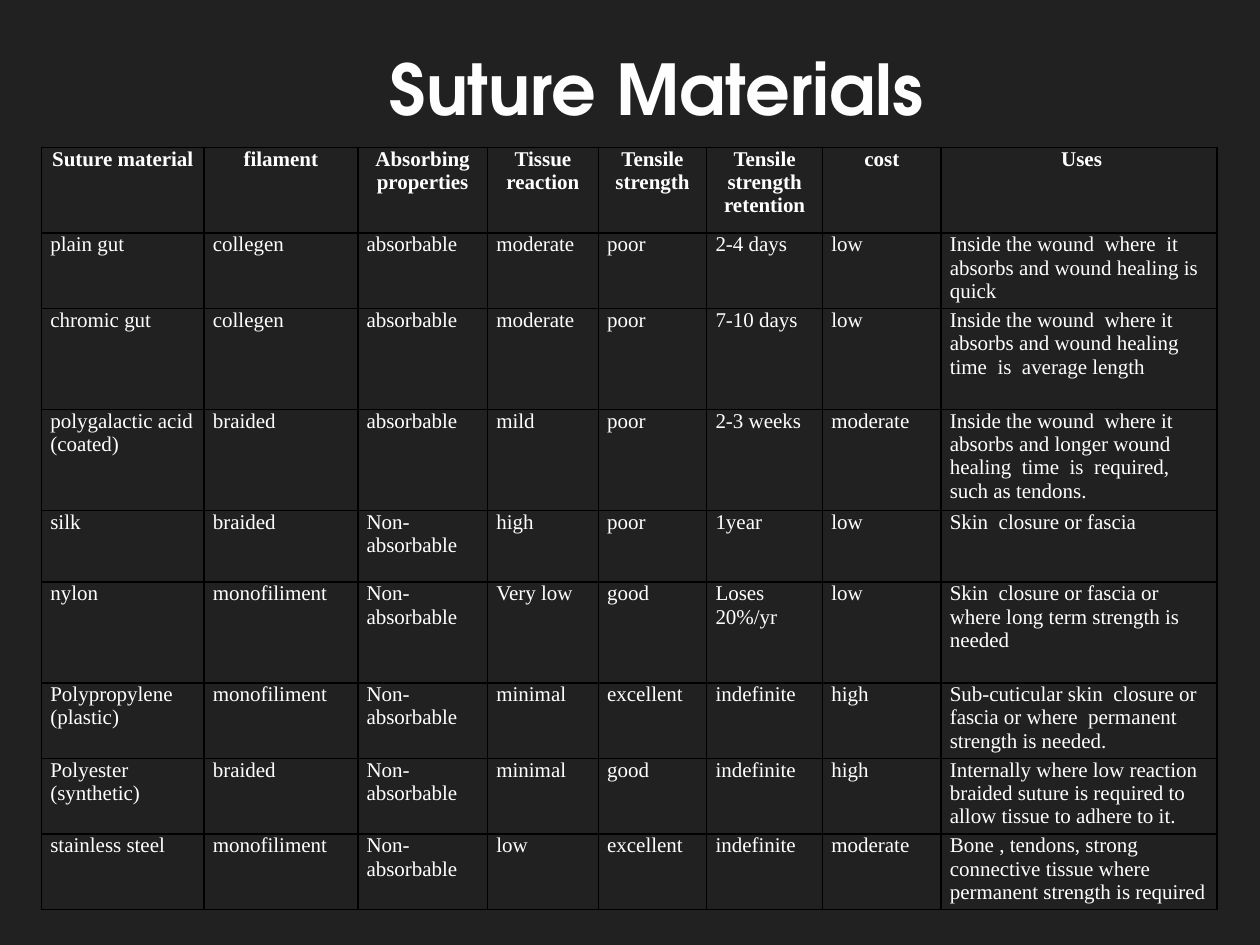
from lxml.etree import SubElement
from pptx import Presentation
from pptx.dml.color import RGBColor
from pptx.enum.text import MSO_ANCHOR, PP_ALIGN
from pptx.oxml import parse_xml
from pptx.oxml.ns import nsdecls, qn
from pptx.util import Inches, Pt

BACKGROUND = RGBColor(0x21, 0x21, 0x21)
TITLE_COLOR = RGBColor(0xFE, 0xFE, 0xFE)
TEXT_COLOR = RGBColor(0xFF, 0xFF, 0xFF)
BORDER_COLOR = RGBColor(0, 0, 0)

TITLE = "Suture Materials"
HEADER = ("Suture material", "filament", "Absorbing properties", "Tissue reaction",
          "Tensile\nstrength", "Tensile strength retention", "cost", " Uses")
SUTURES = [
    ("plain gut", "collegen", "absorbable", "moderate", "poor", "2-4 days", "low",
     "Inside the wound  where  it absorbs and wound healing is quick"),
    ("chromic gut", "collegen", "absorbable", "moderate", "poor", "7-10 days", "low",
     "Inside the wound  where it absorbs and wound healing  time  is  average length"),
    ("polygalactic acid (coated)", "braided", "absorbable", "mild", "poor", "2-3 weeks", "moderate",
     "Inside the wound  where it absorbs and longer wound healing  time  is  required,\n"
     "such as tendons."),
    ("silk", "braided", "Non-absorbable", "high", "poor", "1year", "low",
     "Skin  closure or fascia"),
    ("nylon", "monofiliment", "Non-absorbable", "Very low", "good", "Loses 20%/yr", "low",
     "Skin  closure or fascia or where long term strength is needed"),
    ("Polypropylene (plastic)", "monofiliment", "Non-absorbable", "minimal", "excellent",
     "indefinite", "high",
     "Sub-cuticular skin  closure or fascia or where  permanent strength is needed."),
    ("Polyester (synthetic)", "braided", "Non-absorbable", "minimal", "good", "indefinite", "high",
     "Internally where low reaction braided suture is required to allow tissue to adhere to it."),
    ("stainless steel", "monofiliment", "Non-absorbable", "low", "excellent", "indefinite",
     "moderate",
     "Bone , tendons, strong connective tissue where permanent strength is required"),
]
COLUMN_WIDTHS = (1.29, 1.22, 1.03, 0.88, 0.86, 0.92, 0.94, 2.19)
ROW_HEIGHTS = (0.68, 0.6, 0.8, 0.8, 0.57, 0.8, 0.6, 0.6, 0.6)


def style_font(font, name, size, color, bold):
    font.name = name
    font.size = Pt(size)
    font.color.rgb = color
    font.bold = bold


def add_borders(cell):
    properties = cell._tc.get_or_add_tcPr()
    for position, side in enumerate(("lnL", "lnR", "lnT", "lnB")):
        line = parse_xml(f'<a:{side} {nsdecls("a")} w="{Pt(1)}"><a:solidFill>'
                         f'<a:srgbClr val="{BORDER_COLOR}"/></a:solidFill></a:{side}>')
        properties.insert(position, line)


def add_text_shadow(run):
    effects = SubElement(run._r.get_or_add_rPr(), qn("a:effectLst"))
    shadow = SubElement(effects, qn("a:outerShdw"), blurRad=str(Pt(4)),
                        dist=str(Pt(2)), dir="2700000")
    color = SubElement(shadow, qn("a:srgbClr"), val=str(BORDER_COLOR))
    SubElement(color, qn("a:alpha"), val="60000")


def add_title(slide):
    box = slide.shapes.add_textbox(Inches(0.67), Inches(-0.17), Inches(9.08), Inches(1.25))
    frame = box.text_frame
    frame.word_wrap = True
    frame.vertical_anchor = MSO_ANCHOR.BOTTOM
    paragraph = frame.paragraphs[0]
    paragraph.text = TITLE
    paragraph.alignment = PP_ALIGN.CENTER
    style_font(paragraph.font, "TeX Gyre Adventor", 40, TITLE_COLOR, True)
    add_text_shadow(paragraph.runs[0])


def fill_cell(cell, text, is_header):
    cell.text = text
    cell.margin_left = cell.margin_right = Inches(0.07)
    cell.margin_top = cell.margin_bottom = 0
    cell.fill.background()
    add_borders(cell)
    for paragraph in cell.text_frame.paragraphs:
        paragraph.alignment = PP_ALIGN.CENTER if is_header else PP_ALIGN.LEFT
        style_font(paragraph.font, "Times New Roman", 12, TEXT_COLOR, is_header)


def add_suture_table(slide):
    rows = [HEADER, *SUTURES]
    table = slide.shapes.add_table(
        len(rows), len(HEADER), Inches(0.33), Inches(1.17),
        Inches(sum(COLUMN_WIDTHS)), Inches(sum(ROW_HEIGHTS))).table
    table.horz_banding = False
    for column, width in zip(table.columns, COLUMN_WIDTHS):
        column.width = Inches(width)
    for row, height in zip(table.rows, ROW_HEIGHTS):
        row.height = Inches(height)
    for row_index, texts in enumerate(rows):
        for column_index, text in enumerate(texts):
            fill_cell(table.cell(row_index, column_index), text, row_index == 0)


def main():
    presentation = Presentation()
    presentation.slide_width = Inches(10)
    presentation.slide_height = Inches(7.5)
    slide = presentation.slides.add_slide(presentation.slide_layouts[6])
    slide.background.fill.solid()
    slide.background.fill.fore_color.rgb = BACKGROUND
    add_suture_table(slide)
    add_title(slide)
    presentation.save("out.pptx")


if __name__ == "__main__":
    main()
